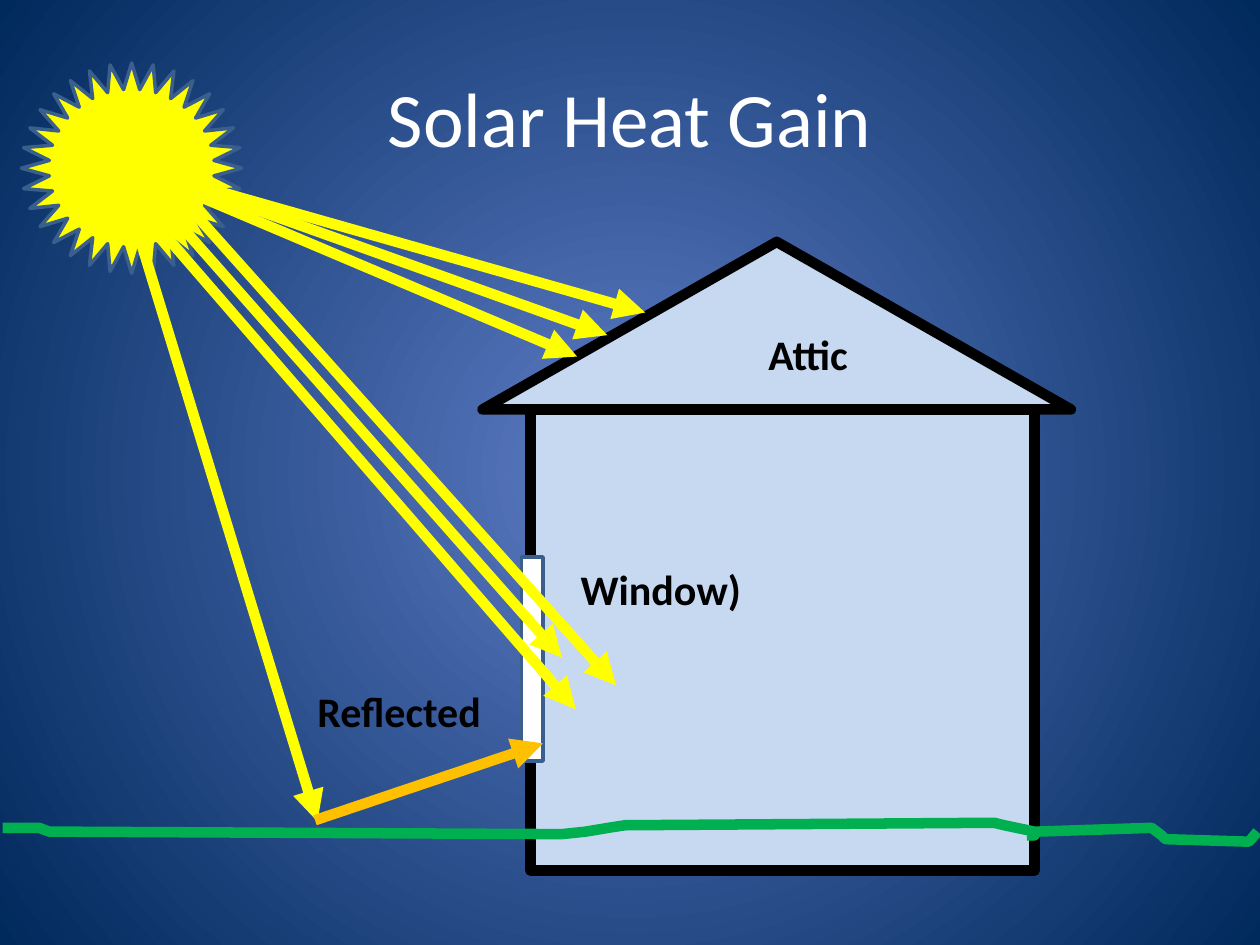
from lxml.etree import SubElement
from pptx import Presentation
from pptx.dml.color import RGBColor
from pptx.enum.shapes import MSO_CONNECTOR, MSO_SHAPE
from pptx.enum.text import MSO_ANCHOR, PP_ALIGN
from pptx.oxml import parse_xml
from pptx.oxml.ns import nsdecls, qn
from pptx.util import Inches, Pt

# Content: lengths in inches
FONT = "Calibri"
COLORS = {
    "glow": "5E7CC5", "night": "00295C", "title": "FFFFFF", "sun": "FFFF00",
    "edge": "3A5F8C", "house": "C6D9F1", "ink": "000000", "glass": "FFFFFF",
    "reflection": "FFC000", "ground": "00B050",
}
TITLE = "Solar Heat Gain"

# preset, (left, top, width, height), fill, line, line width
SHAPES = [
    (MSO_SHAPE.STAR_32_POINT, (0.17, 0.5, 1.75, 1.67), "sun", "edge", 2),
    (MSO_SHAPE.RECTANGLE, (4.21, 3.25, 4, 3.66), "house", "ink", 6),
    (MSO_SHAPE.ISOSCELES_TRIANGLE, (3.83, 1.92, 4.67, 1.33), "house", "ink", 6),
    (MSO_SHAPE.RECTANGLE, (4.14, 4.42, 0.17, 1.62), "glass", "edge", 2),
]
HOUSE_LABELS = [
    ("Window)", (4.51, 4.42, 1.93, 0.5)),
    ("Attic", (6, 2.56, 0.92, 0.5)),
]
REFLECTED_LABEL = ("Reflected", (2.42, 5.39, 1.93, 0.5))

# start, end, color
RAYS = [
    ((1.2, 1.31), (4.89, 5.44), "sun"),
    ((1.08, 1.39), (4.46, 5.22), "sun"),
    ((0.95, 1.37), (2.52, 6.52), "sun"),
    ((2.5, 6.51), (4.31, 5.9), "reflection"),
    ((1.08, 1.6), (4.57, 5.63), "sun"),
    ((1.04, 1.33), (4.58, 2.83), "sun"),
    ((1.1, 1.33), (4.82, 2.66), "sun"),
    ((1.07, 1.33), (5.12, 2.48), "sun"),
]
GROUND = [
    [(8.21, 6.6), (7.97, 6.55), (7.89, 6.53), (4.96, 6.55), (4.83, 6.57),
     (4.65, 6.6), (4.46, 6.62), (0.39, 6.6), (0.31, 6.57), (0.02, 6.57)],
    [(9.98, 6.6), (9.93, 6.66), (9.91, 6.68), (9.25, 6.66), (9.22, 6.63),
     (9.14, 6.57), (8.23, 6.6), (8.21, 6.63), (8.15, 6.63)],
]


def color(name):
    return RGBColor.from_string(COLORS[name])


def inches(values):
    return [Inches(value) for value in values]


def style_line(line, name, width):
    line.color.rgb = color(name)
    line.width = Pt(width)


def add_run(paragraph, text, size, name, bold=False):
    run = paragraph.add_run()
    run.text = text
    run.font.name = FONT
    run.font.size = Pt(size)
    run.font.bold = bold
    run.font.color.rgb = color(name)


def add_label(slide, text, box):
    frame = slide.shapes.add_textbox(*inches(box)).text_frame
    frame.word_wrap = True
    add_run(frame.paragraphs[0], text, 24, "ink", bold=True)


def add_ray(slide, start, end, name):
    ray = slide.shapes.add_connector(
        MSO_CONNECTOR.STRAIGHT, *inches(start + end))
    style_line(ray.line, name, 6)
    SubElement(ray.line._get_or_add_ln(), qn("a:tailEnd"), type="triangle")
    SubElement(ray._element.spPr, qn("a:effectLst"))


def add_ground(slide, points):
    start, *rest = [tuple(inches(point)) for point in points]
    builder = slide.shapes.build_freeform(*start)
    builder.add_line_segments(rest, close=False)
    ground = builder.convert_to_shape()
    ground.shadow.inherit = False
    ground.fill.background()
    style_line(ground.line, "ground", 6)


def paint_background(slide):
    fill = slide.background.fill
    fill.gradient()
    for stop, name in zip(fill.gradient_stops, ("glow", "night")):
        stop.color.rgb = color(name)
    # Turn the linear gradient into a radial one
    gradient = slide._element.find(".//" + qn("a:gradFill"))
    linear = gradient.find(qn("a:lin"))
    gradient.replace(linear, parse_xml(
        f'<a:path {nsdecls("a")} path="circle">'
        '<a:fillToRect l="50000" t="50000" r="50000" b="50000"/></a:path>'))


presentation = Presentation()
presentation.slide_width, presentation.slide_height = inches((10, 7.5))
slide = presentation.slides.add_slide(presentation.slide_layouts[5])
paint_background(slide)

# Title
title = slide.shapes.title
title.left, title.top, title.width, title.height = inches((0.5, 0.3, 9, 1.25))
title.text_frame.vertical_anchor = MSO_ANCHOR.MIDDLE
heading = title.text_frame.paragraphs[0]
heading.alignment = PP_ALIGN.CENTER
add_run(heading, TITLE, 44, "title")

# Sun, house and window
for preset, box, fill, line, width in SHAPES:
    shape = slide.shapes.add_shape(preset, *inches(box))
    shape.shadow.inherit = False
    shape.fill.solid()
    shape.fill.fore_color.rgb = color(fill)
    style_line(shape.line, line, width)

# Labels, rays and ground
for text, box in HOUSE_LABELS:
    add_label(slide, text, box)
for start, end, name in RAYS:
    add_ray(slide, start, end, name)
for points in GROUND:
    add_ground(slide, points)
add_label(slide, *REFLECTED_LABEL)

presentation.save("out.pptx")
